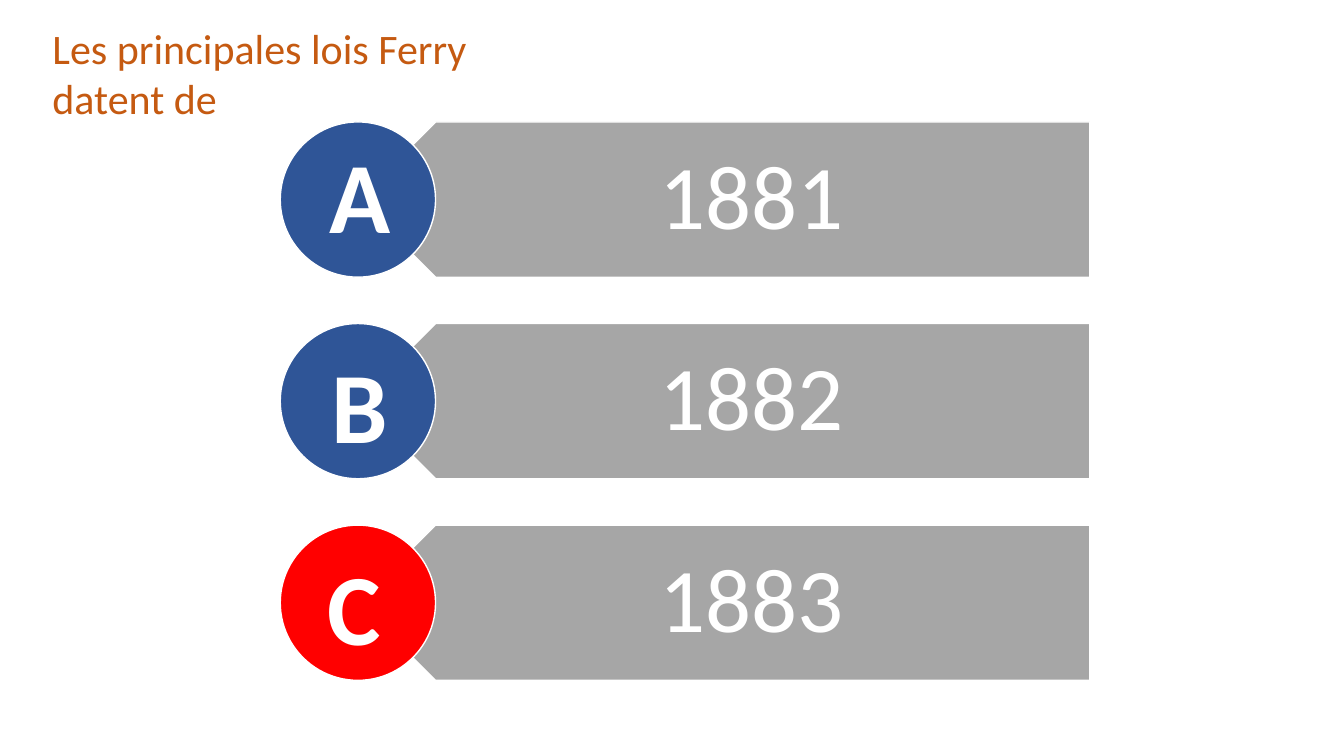
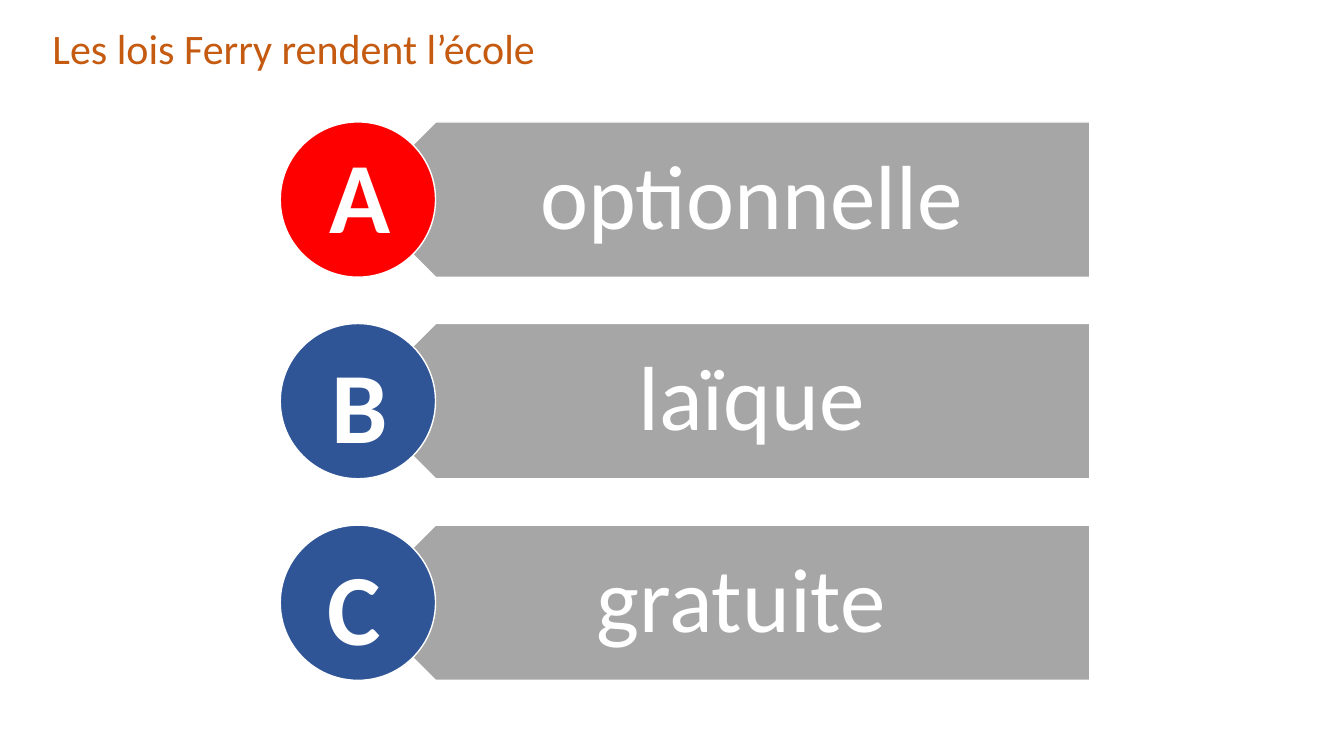
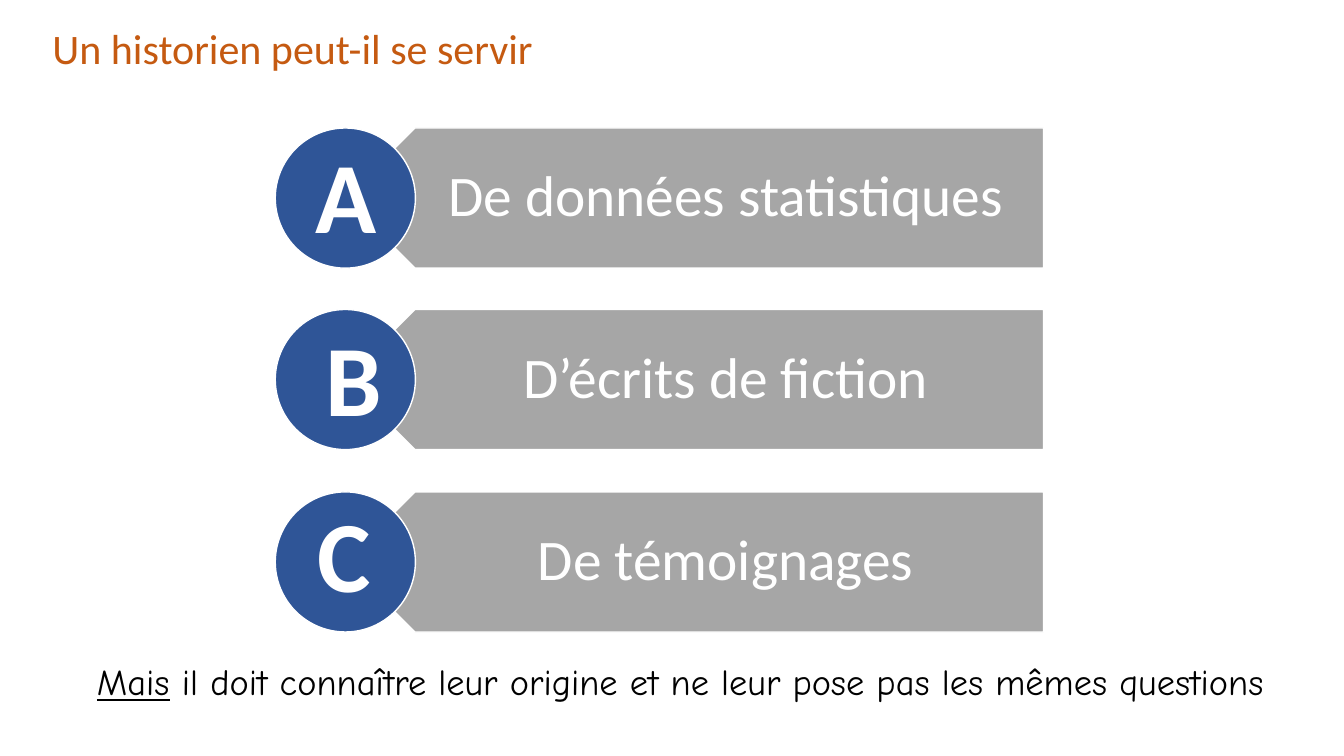
from dataclasses import dataclass

from pptx import Presentation
from pptx import util as u
from pptx.dml.color import RGBColor
from pptx.enum import shapes, text

# Shared scale, colours and fonts
PX = 9144  # EMU per px, 100 px to the inch
WHITE, BLACK = "FFFFFF", "000000"
PLATE_GREY, DISC_BLUE, DISC_RED, QUESTION_ORANGE = "A6A6A6", "2F5597", "FF0000", "C55A11"
BODY_FONT, NOTE_FONT = "Calibri", "Comic Neue"
TITLE_ONLY = 5
LETTER_HEIGHT = 131


@dataclass(frozen=True)
class Layout:
    """Geometry of the three answer rows."""
    left: int
    top: int
    last_top: int
    disc: int
    plate_width: int
    insets: tuple[int, int, int, int]
    answer_size: int
    letter_width: int
    letter_spots: tuple[tuple[int, int], ...]


@dataclass(frozen=True)
class Quiz:
    question: str
    question_width: int
    question_height: int
    answers: tuple[str, str, str]
    layout: Layout
    red_letter: str = ""
    conclusion: tuple[str, str] | None = None


LARGE = Layout(278, 121, 521, 154, 726, (68, 27, 51, 27), 65,
               102, ((306, 127), (306, 335), (300, 535)))
COMPACT = Layout(273, 127, 488, 139, 693, (61, 17, 32, 17), 41,
                 98, ((294, 127), (302, 308), (292, 483)))

QUIZZES = (
    Quiz("Les principales lois Ferry datent de", 450, 111,
         ("1881", "1882", "1883"), LARGE, red_letter="C"),
    Quiz("Les lois Ferry rendent l’école", 575, 61,
         ("optionnelle", "laïque", "gratuite "), LARGE, red_letter="A"),
    Quiz("Un historien peut-il se servir", 575, 61,
         ("De données statistiques", "D’écrits de fiction", "De témoignages"), COMPACT,
         conclusion=("Mais", " il doit connaître leur origine et ne leur pose pas les mêmes questions")),
)


def px(*lengths: int) -> list[int]:
    return [u.Emu(length * PX) for length in lengths]


def colour(hex_code: str) -> RGBColor:
    return RGBColor.from_string(hex_code)


def set_text(frame, content: str, size: int, hex_code: str, font: str = BODY_FONT,
             bold: bool = False, align=text.PP_ALIGN.CENTER,
             anchor=text.MSO_ANCHOR.TOP):
    """Fill a frame with one paragraph and return that paragraph."""
    frame.word_wrap = True
    frame.auto_size = text.MSO_AUTO_SIZE.NONE
    frame.vertical_anchor = anchor
    paragraph = frame.paragraphs[0]
    paragraph.text = content
    paragraph.alignment = align
    paragraph.font.name = font
    paragraph.font.size = u.Pt(size)
    paragraph.font.bold = bold
    paragraph.font.color.rgb = colour(hex_code)
    return paragraph


def add_filled(slide, preset, box: tuple[int, int, int, int], fill: str):
    shape = slide.shapes.add_shape(preset, *px(*box))
    shape.shadow.inherit = False
    shape.fill.solid()
    shape.fill.fore_color.rgb = colour(fill)
    shape.line.color.rgb = colour(WHITE)
    shape.line.width = u.Pt(1)
    return shape


def add_question(slide, quiz: Quiz) -> None:
    title = slide.shapes.title
    title.left, title.top, title.width, title.height = px(
        42, 17, quiz.question_width, quiz.question_height)
    set_text(title.text_frame, quiz.question, 30, QUESTION_ORANGE,
             align=text.PP_ALIGN.LEFT)


def add_row(slide, layout: Layout, row: int, letter: str, answer: str, disc_fill: str) -> None:
    top = layout.top + row * (layout.last_top - layout.top) // 2
    plate_left = layout.left + layout.disc // 2
    indent = layout.disc // 4

    # Grey plate pointing left
    plate = add_filled(slide, shapes.MSO_SHAPE.PENTAGON,
                       (plate_left, top, layout.plate_width, layout.disc), PLATE_GREY)
    plate.rotation = 180

    # Answer
    answer_box = slide.shapes.add_textbox(
        *px(plate_left + indent, top, layout.plate_width - indent, layout.disc))
    frame = answer_box.text_frame
    frame.margin_left, frame.margin_top, frame.margin_right, frame.margin_bottom = px(*layout.insets)
    set_text(frame, answer, layout.answer_size, WHITE,
             anchor=text.MSO_ANCHOR.MIDDLE).line_spacing = 0.9

    # Disc and its letter
    add_filled(slide, shapes.MSO_SHAPE.OVAL,
               (layout.left, top, layout.disc, layout.disc), disc_fill)
    letter_box = slide.shapes.add_textbox(
        *px(*layout.letter_spots[row], layout.letter_width, LETTER_HEIGHT))
    set_text(letter_box.text_frame, letter, 72, WHITE, bold=True)


def add_conclusion(slide, stressed: str, rest: str) -> None:
    conclusion = slide.shapes.add_textbox(*px(42, 622, 1267, 112))
    paragraph = set_text(conclusion.text_frame, stressed, 26, BLACK, NOTE_FONT,
                         anchor=text.MSO_ANCHOR.MIDDLE)
    paragraph.line_spacing = 0.9
    paragraph.runs[0].font.underline = True
    paragraph.add_run().text = rest


def main() -> None:
    deck = Presentation()
    deck.slide_width, deck.slide_height = px(1333, 750)
    for quiz in QUIZZES:
        slide = deck.slides.add_slide(deck.slide_layouts[TITLE_ONLY])
        add_question(slide, quiz)
        for row, (letter, answer) in enumerate(zip("ABC", quiz.answers)):
            disc_fill = DISC_RED if letter == quiz.red_letter else DISC_BLUE
            add_row(slide, quiz.layout, row, letter, answer, disc_fill)
        if quiz.conclusion:
            add_conclusion(slide, *quiz.conclusion)
    deck.save("out.pptx")


if __name__ == "__main__":
    main()
